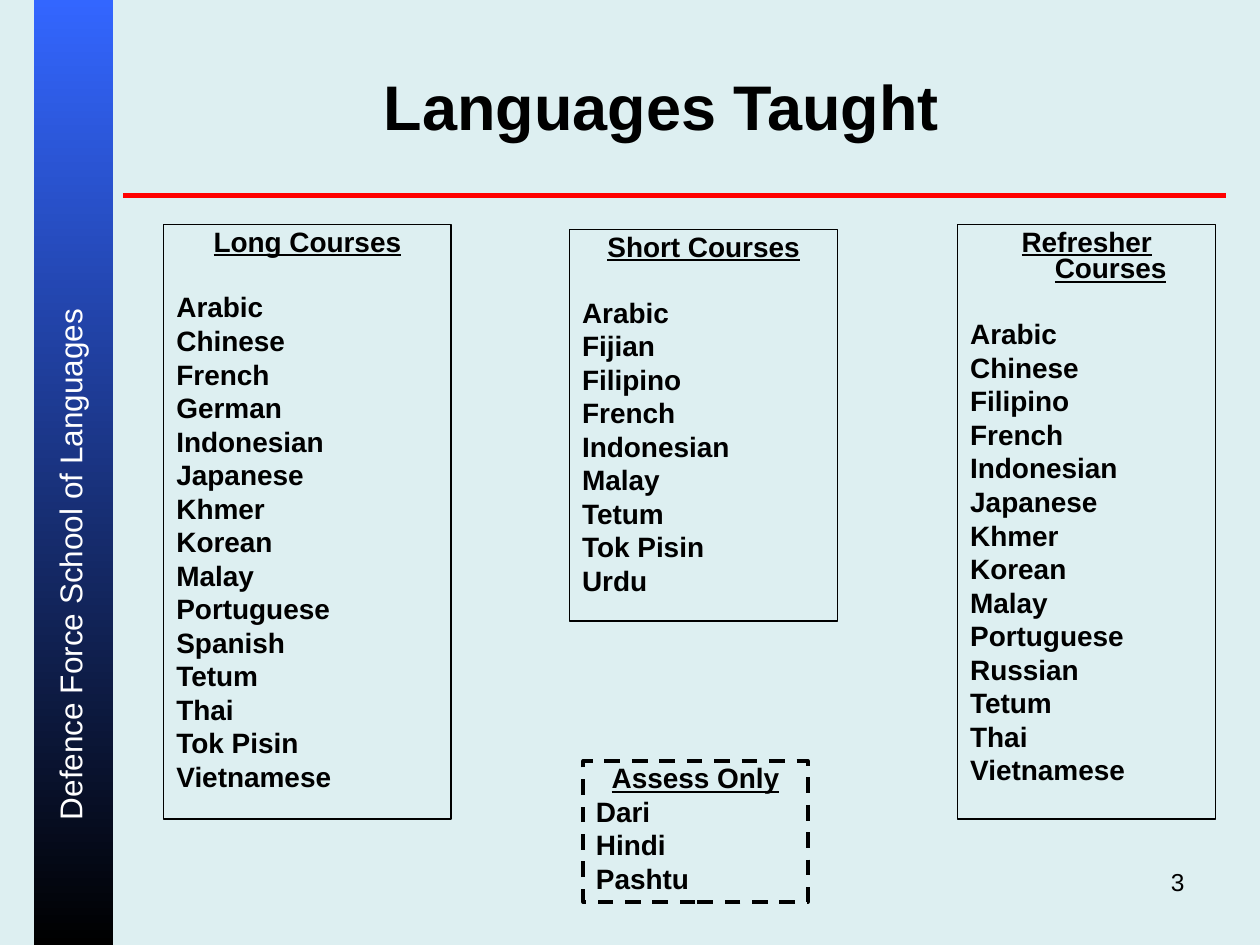
from lxml import etree
from pptx import Presentation
from pptx.dml.color import RGBColor
from pptx.enum.dml import MSO_LINE
from pptx.enum.shapes import MSO_CONNECTOR, MSO_SHAPE
from pptx.enum.text import MSO_ANCHOR, MSO_AUTO_SIZE, PP_ALIGN
from pptx.oxml.ns import qn
from pptx.util import Inches, Pt

LEFT, MID, RIGHT = PP_ALIGN.LEFT, PP_ALIGN.CENTER, PP_ALIGN.RIGHT
TOP, CENTER = MSO_ANCHOR.TOP, MSO_ANCHOR.MIDDLE
FIXED = MSO_AUTO_SIZE.NONE
DASH = MSO_LINE.DASH
COMPARISON = 4

THEME = {
    "font": "Arial",
    "back": RGBColor(0xDD, 0xEF, 0xF1),
    "ink": RGBColor(0, 0, 0),
    "pale": RGBColor(255, 255, 255),
    "blue": RGBColor(0x33, 0x66, 0xFF),
    "red": RGBColor(255, 0, 0),
    "title": Pt(36),
    "side": Pt(18),
    "list": Pt(16),
    "page": Pt(14),
}


def place(shape, box):
    names = ("left", "top", "width", "height")
    for name, value in zip(names, box):
        setattr(shape, name, Inches(value))


def write(para, text, size, color="ink", align=LEFT, **extra):
    """Fill a paragraph; extra holds further font values."""
    para.text = text
    para.alignment = align
    para.font.color.rgb = THEME[color]
    look = {"name": THEME["font"], "size": THEME[size], **extra}
    for name, value in look.items():
        setattr(para.font, name, value)


deck = Presentation()
deck.slide_width, deck.slide_height = Inches(10), Inches(7.5)
slide = deck.slides.add_slide(deck.slide_layouts[COMPARISON])
slide.background.fill.solid()
slide.background.fill.fore_color.rgb = THEME["back"]
shapes = slide.shapes

# Side band with the school name
band = shapes.add_shape(MSO_SHAPE.RECTANGLE, Inches(0.27), 0,
                        Inches(0.63), deck.slide_height)
band.shadow.inherit = False
band.line.fill.background()
band.fill.gradient()
band.fill.gradient_angle = 270
for stop, color, spot in zip(band.fill.gradient_stops, ("blue", "ink"), (0, 1)):
    stop.color.rgb = THEME[color]
    stop.position = spot

school = shapes.add_textbox(0, 0, 0, 0)
place(school, (-2.46, 4.28, 6.03, 0.4))
school.rotation = 270
school.text_frame.word_wrap = True
write(school.text_frame.paragraphs[0], "Defence Force School of Languages",
      "side", "pale", MID)

# Title and rule
title = shapes.title
place(title, (0.75, 0.21, 9, 1.25))
title.text_frame.auto_size = FIXED
title.text_frame.vertical_anchor = CENTER
write(title.text_frame.paragraphs[0], "Languages Taught", "title",
      align=MID, bold=True)

rule = shapes.add_connector(MSO_CONNECTOR.STRAIGHT, Inches(0.98), Inches(1.55),
                            Inches(9.73), Inches(1.55))
rule.line.color.rgb = THEME["red"]
rule.line.width = Pt(3)
etree.SubElement(rule._element.spPr, qn("a:effectLst"))

# Course lists: heading, languages, box, line width, dash, gap under heading
GAP, WIDE = Pt(3.8), Pt(22.3)
COURSES = [
    ("Long Courses",
     ["Arabic", "Chinese", "French", "German", "Indonesian", "Japanese",
      "Khmer", "Korean", "Malay", "Portuguese", "Spanish", "Tetum", "Thai",
      "Tok Pisin", "Vietnamese"],
     (1.3, 1.78, 2.28, 4.72), 0.75, None, WIDE),
    ("Short Courses",
     ["Arabic", "Fijian", "Filipino", "French", "Indonesian", "Malay",
      "Tetum", "Tok Pisin", "Urdu"],
     (4.52, 1.82, 2.13, 3.11), 0.75, None, WIDE),
    ("Refresher Courses",
     ["Arabic", "Chinese", "Filipino", "French", "Indonesian", "Japanese",
      "Khmer", "Korean", "Malay", "Portuguese", "Russian", "Tetum", "Thai",
      "Vietnamese"],
     (7.6, 1.78, 2.05, 4.72), 0.75, None, WIDE),
    ("Assess Only", ["Dari", "Hindi", "Pashtu"],
     (4.63, 6.04, 1.78, 1.12), 2.25, DASH, GAP),
]
HANG = Inches(0.38)
bodies = [item for item in slide.placeholders if item != title]
for body, (head, tongues, box, width, dash, gap) in zip(bodies, COURSES):
    place(body, box)
    body.line.color.rgb = THEME["ink"]
    body.line.width = Pt(width)
    if dash:
        body.line.dash_style = dash
    frame = body.text_frame
    frame.auto_size = FIXED
    frame.vertical_anchor = TOP
    frame.word_wrap = True
    for row, text in enumerate([head, *tongues]):
        para = frame.add_paragraph() if row else frame.paragraphs[0]
        props = para._p.get_or_add_pPr()
        props.set("marL", str(HANG))
        props.set("indent", str(-HANG))
        etree.SubElement(props, qn("a:buNone"))
        para.line_spacing = 0.8
        para.space_before = (Pt(0), gap)[row] if row < 2 else GAP
        write(para, text, "list", align=LEFT if row else MID,
              bold=True, underline=row == 0)

# Page number
page = shapes.add_textbox(0, 0, 0, 0)
place(page, (7.17, 6.83, 2.33, 0.52))
page.text_frame.word_wrap = True
write(page.text_frame.paragraphs[0], "3", "page", align=RIGHT)

deck.save("out.pptx")
